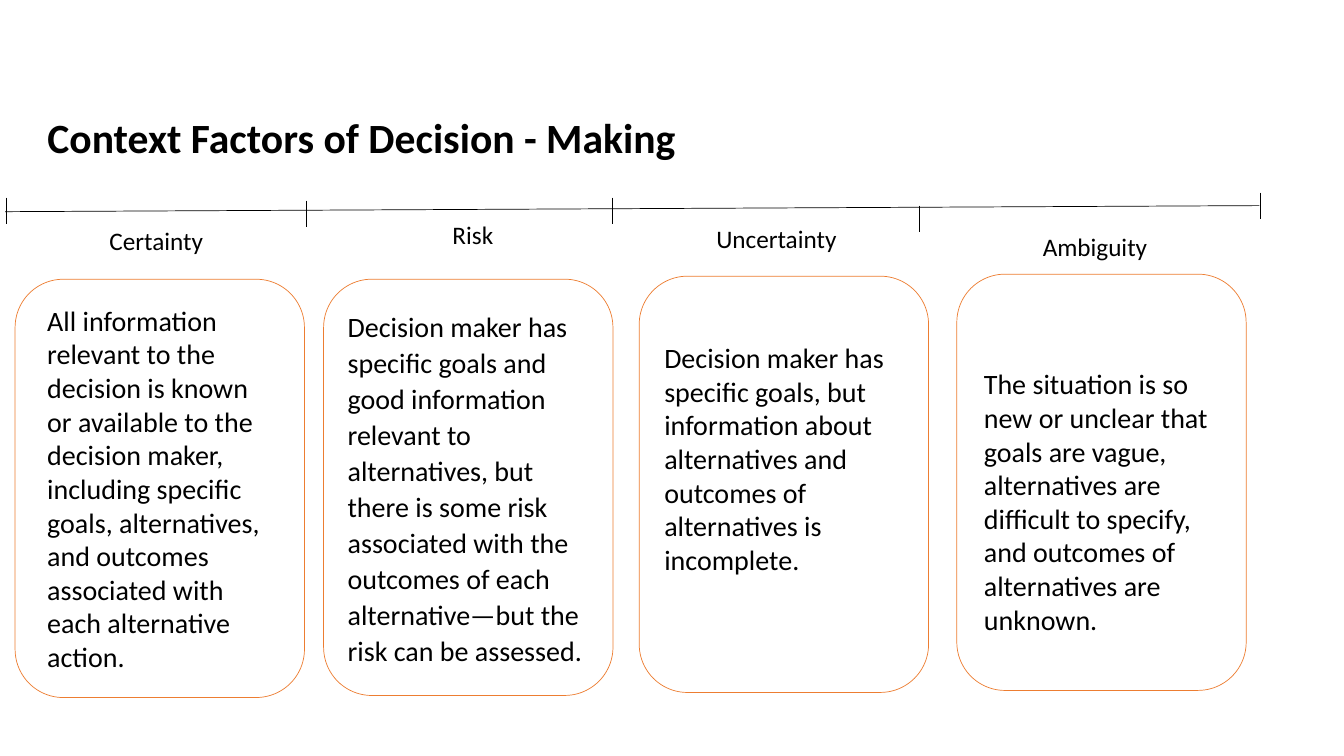
from lxml import etree
from pptx import Presentation
from pptx import util as u
from pptx.dml.color import RGBColor
from pptx.enum import shapes, text
from pptx.oxml.ns import qn

EMU_PER_PX = 9144
COLOURS = {"ink": "000000", "card": "ED7D31"}
CARD_WIDTH = 287
LABEL_WIDTH, LABEL_HEIGHT = 172, 40

TICKS = [(6, 196), (304, 199), (607, 196), (912, 204), (1250, 191)]
LABELS = [
    ("Certainty", 69, 219),
    ("Risk", 383, 213),
    ("Uncertainty", 684, 217),
    ("Ambiguity", 1000, 225),
]
CARDS = [(15, 277, 415), (321, 277, 413), (634, 274, 413), (949, 272, 413)]
RISK = (
    "Decision maker has specific goals and good information relevant to "
    "alternatives, but there is some risk associated with the outcomes of "
    "each alternative—but the risk can be assessed."
)
DESCRIPTIONS = [
    ("All information relevant to the decision is known or available to the "
     "decision maker, including specific goals, alternatives, and outcomes "
     "associated with each alternative action.", (37, 296, 236, 411)),
    ("Decision maker has specific goals, but information about alternatives "
     "and outcomes of alternatives is incomplete.", (649, 333, 244, 246)),
    ("The situation is so new or unclear that goals are vague, alternatives "
     "are difficult to specify, and outcomes of alternatives are unknown.",
     (966, 359, 252, 279)),
]


def px(*lengths):
    return [u.Emu(length * EMU_PER_PX) for length in lengths]


def write(frame, words, size=20, bold=False, align=text.PP_ALIGN.LEFT,
          anchor=text.MSO_ANCHOR.TOP, spacing=1.0):
    frame.word_wrap = True
    frame.vertical_anchor = anchor
    para = frame.paragraphs[0]
    para.alignment = align
    para.line_spacing = spacing
    span = para.add_run()
    span.text = words
    span.font.name = "Calibri"
    span.font.size = u.Pt(size)
    span.font.bold = bold
    span.font.color.rgb = RGBColor.from_string(COLOURS["ink"])


class SlideBuilder:
    line_width = u.Pt(0.5)

    def __init__(self, deck):
        self.page = deck.slides.add_slide(deck.slide_layouts[5])

    def outline(self, line, colour):
        line.width = self.line_width
        line.color.rgb = RGBColor.from_string(COLOURS[colour])

    def title(self, words, place):
        box = self.page.shapes.title
        box.left, box.top, box.width, box.height = px(*place)
        frame = box.text_frame
        frame.auto_size = text.MSO_AUTO_SIZE.NONE
        frame.margin_bottom = 0
        write(frame, words, size=29.7, bold=True,
              anchor=text.MSO_ANCHOR.BOTTOM, spacing=0.9)

    def line(self, *ends):
        connector = self.page.shapes.add_connector(
            shapes.MSO_CONNECTOR.STRAIGHT, *px(*ends))
        self.outline(connector.line, "ink")
        etree.SubElement(connector._element.spPr, qn("a:effectLst"))

    def label(self, words, place, **style):
        box = self.page.shapes.add_textbox(*px(*place))
        write(box.text_frame, words, **style)

    def card(self, place):
        box = self.page.shapes.add_shape(
            shapes.MSO_SHAPE.ROUNDED_RECTANGLE, *px(*place))
        box.shadow.inherit = False
        box.fill.background()
        self.outline(box.line, "card")
        return box


def main():
    deck = Presentation()
    deck.slide_width, deck.slide_height = px(1333, 750)
    builder = SlideBuilder(deck)

    builder.title("Context Factors of Decision - Making", (37, 36, 1000, 125))
    builder.line(5, 210, 1249, 204)
    for left, top in TICKS:
        builder.line(left, top, left, top + 26)
    for words, left, top in LABELS:
        builder.label(words, (left, top, LABEL_WIDTH, LABEL_HEIGHT),
                      size=18, align=text.PP_ALIGN.CENTER)

    cards = [builder.card((left, top, CARD_WIDTH, height))
             for left, top, height in CARDS]
    risk_card = cards[1]
    write(risk_card.text_frame, RISK, anchor=text.MSO_ANCHOR.MIDDLE,
          spacing=1.07)
    risk_card.text_frame.paragraphs[0].space_after = u.Pt(8)
    for words, place in DESCRIPTIONS:
        builder.label(words, place)

    deck.save("out.pptx")


if __name__ == "__main__":
    main()
